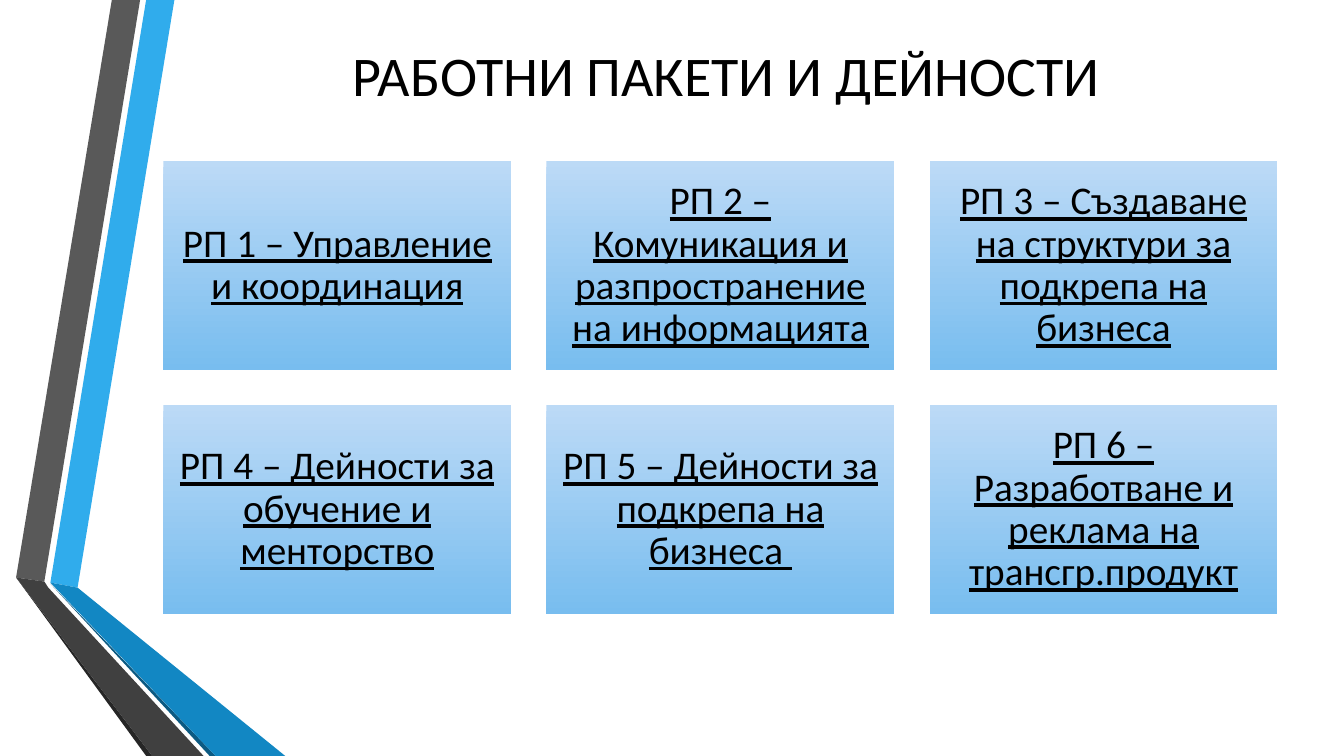
from pptx import Presentation
from pptx.dml.color import RGBColor
from pptx.enum.shapes import MSO_SHAPE
from pptx.enum.text import MSO_ANCHOR, PP_ALIGN

EMU_PER_PX = 9144
SLIDE_WIDTH, SLIDE_HEIGHT = 1333, 750
FONT_NAME = "Calibri"

BLACK = RGBColor(0x00, 0x00, 0x00)
BLUE = RGBColor(0x30, 0xAC, 0xEC)
DEEP_BLUE = RGBColor(0x12, 0x87, 0xC3)
NAVY = RGBColor(0x0C, 0x5A, 0x82)
GREY = RGBColor(0x59, 0x59, 0x59)
DARK_GREY = RGBColor(0x40, 0x40, 0x40)
CHARCOAL = RGBColor(0x26, 0x26, 0x26)
CARD_TOP = RGBColor(0xBC, 0xDA, 0xF6)
CARD_BOTTOM = RGBColor(0x78, 0xBD, 0xEF)

RIBBONS = [
    (BLUE, [(50, 578), (77, 583), (173, 0), (145, 0)]),
    (GREY, [(139, 0), (111, 0), (16, 573), (44, 577)]),
    (CHARCOAL, [(16, 573), (145, 750), (151, 750)]),
    (NAVY, [(50, 579), (208, 750), (214, 750)]),
    (DEEP_BLUE, [(50, 578), (214, 750), (283, 750), (77, 583)]),
    (DARK_GREY, [(202, 750), (48, 583), (44, 577), (16, 573), (151, 750)]),
]

WORK_PACKAGES = [
    "РП 1 – Управление и координация",
    "РП 2 – Комуникация и разпространение на информацията",
    "РП 3 – Създаване на структури за подкрепа на бизнеса",
    "РП 4 – Дейности за обучение и менторство",
    "РП 5 – Дейности за подкрепа на бизнеса ",
    "РП 6 – Разработване и реклама на трансгр.продукт",
]
COLUMNS = 3
GRID_LEFT, GRID_TOP = 162, 160
CARD_WIDTH, CARD_HEIGHT, CARD_GAP = 345, 207, 35
CARD_MARGIN = 12


def px(length):
    """Turn pixels into EMU."""
    return length * EMU_PER_PX


def set_text(shape, text, size, underline=False):
    """Write one centred black line of text in a shape."""
    text_frame = shape.text_frame
    text_frame.text = text
    text_frame.word_wrap = True
    text_frame.vertical_anchor = MSO_ANCHOR.MIDDLE
    paragraph = text_frame.paragraphs[0]
    paragraph.alignment = PP_ALIGN.CENTER
    paragraph.line_spacing = 0.9
    font = paragraph.runs[0].font
    font.name = FONT_NAME
    font.size = size * 12700
    font.color.rgb = BLACK
    font.underline = underline


def add_ribbon(slide, color, points):
    """Draw one filled polygon of the folded ribbon."""
    builder = slide.shapes.build_freeform(*points[0], scale=EMU_PER_PX)
    builder.add_line_segments(points[1:], close=True)
    shape = builder.convert_to_shape()
    shape.shadow.inherit = False
    shape.fill.solid()
    shape.fill.fore_color.rgb = color
    shape.line.fill.background()


def add_title(slide, text):
    """Place and format the slide title."""
    title = slide.shapes.title
    title.left, title.top = px(172), px(38)
    title.width, title.height = px(1096), px(79)
    set_text(title, text, 40)


def add_card(slide, left, top, text):
    """Draw one work package card with a vertical gradient."""
    card = slide.shapes.add_shape(
        MSO_SHAPE.RECTANGLE, px(left), px(top), px(CARD_WIDTH), px(CARD_HEIGHT))
    card.shadow.inherit = False
    card.line.fill.background()
    card.fill.gradient()
    card.fill.gradient_angle = 270
    for stop, color, position in zip(
            card.fill.gradient_stops, (CARD_TOP, CARD_BOTTOM), (0, 1)):
        stop.color.rgb = color
        stop.position = position
    text_frame = card.text_frame
    text_frame.margin_left = text_frame.margin_right = px(CARD_MARGIN)
    text_frame.margin_top = text_frame.margin_bottom = px(CARD_MARGIN)
    set_text(card, text, 28, underline=True)


def main():
    """Build and save the slide."""
    presentation = Presentation()
    presentation.slide_width = px(SLIDE_WIDTH)
    presentation.slide_height = px(SLIDE_HEIGHT)
    slide = presentation.slides.add_slide(presentation.slide_layouts[5])
    for color, points in RIBBONS:
        add_ribbon(slide, color, points)
    add_title(slide, "РАБОТНИ ПАКЕТИ И ДЕЙНОСТИ")
    for index, text in enumerate(WORK_PACKAGES):
        row, column = divmod(index, COLUMNS)
        add_card(slide, GRID_LEFT + column * (CARD_WIDTH + CARD_GAP),
                 GRID_TOP + row * (CARD_HEIGHT + CARD_GAP), text)
    presentation.save("out.pptx")


if __name__ == "__main__":
    main()
